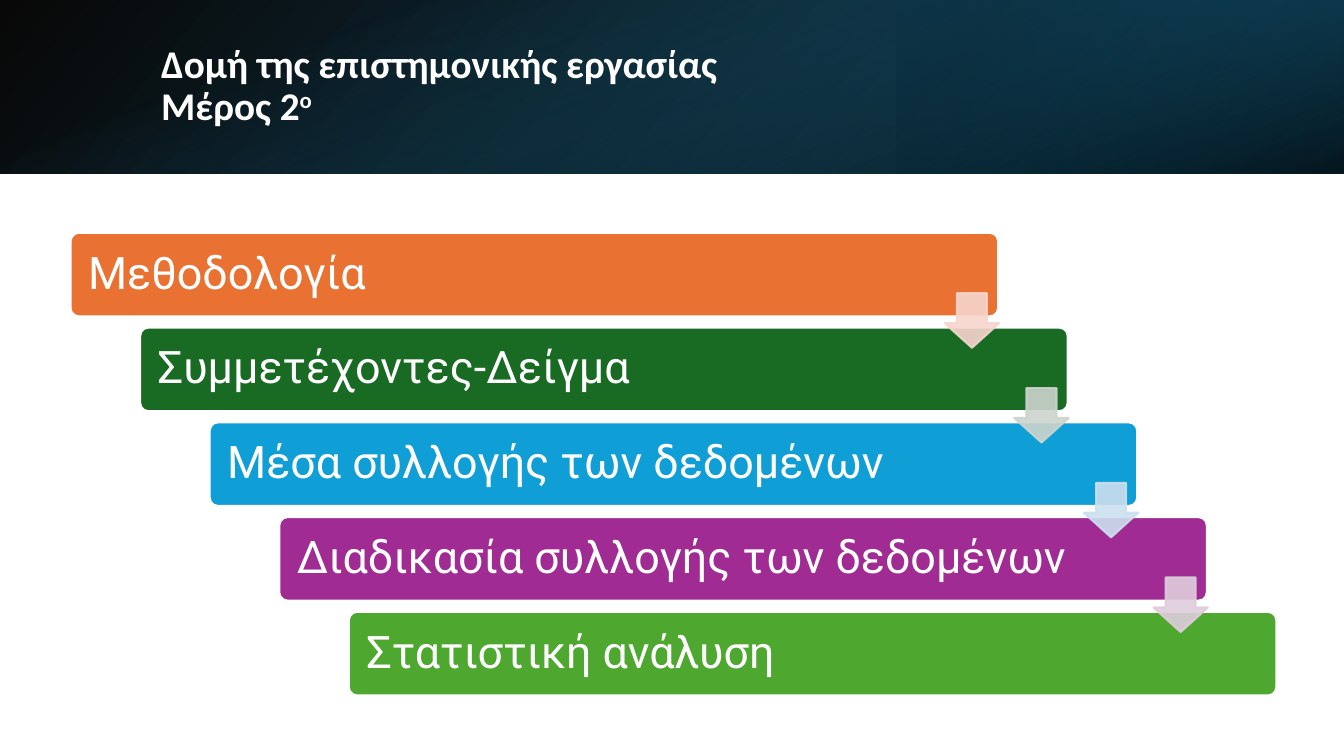
import dataclasses
import typing

import lxml.etree
import pptx
import pptx.dml.color
import pptx.enum.shapes
import pptx.enum.text
import pptx.oxml
import pptx.oxml.ns
import pptx.util

Inches = pptx.util.Inches
Pt = pptx.util.Pt
Shapes = pptx.enum.shapes.MSO_SHAPE
Anchor = pptx.enum.text.MSO_ANCHOR
qn = pptx.oxml.ns.qn


@dataclasses.dataclass(frozen=True)
class Theme:
    white: str = "FFFFFF"
    title_font: str = "Calibri"
    step_font: str = "Roboto"
    title_size: float = 28
    step_size: float = 32
    outline: float = 1.5
    arrow_opacity: int = 90
    line_spacing: float = 0.9


@dataclasses.dataclass(frozen=True)
class Stop:
    position: int
    color: str
    opacity: int


@dataclasses.dataclass(frozen=True)
class Layer:
    left: float
    top: float
    width: float
    height: float
    angle: int
    stops: tuple[Stop, ...]
    rotation: int = 0
    mirrored: bool = False


@dataclasses.dataclass(frozen=True)
class Step:
    text: str
    color: str
    arrow_color: typing.Optional[str] = None


THEME = Theme()
PAGE_WIDTH, PAGE_HEIGHT, HEADER_HEIGHT = 13.33, 7.5, 1.72
FIRST_LEFT, FIRST_TOP = 0.7, 2.31
STEP_RIGHT, STEP_DOWN = 0.69, 0.94
BAR_WIDTH, BAR_HEIGHT = 9.2, 0.83
ARROW_RIGHT, ARROW_DOWN, ARROW_SIZE = 8.67, 0.6, 0.54

HEADER = (
    Layer(0, 0, PAGE_WIDTH, HEADER_HEIGHT, 140,
          (Stop(0, "000000", 96), Stop(100, "104862", 96)), mirrored=True),
    Layer(8.89, 0, 4.44, HEADER_HEIGHT, 320,
          (Stop(19, "0B3041", 68), Stop(100, "156082", 79)), rotation=180, mirrored=True),
    Layer((PAGE_WIDTH - HEADER_HEIGHT) / 2, (HEADER_HEIGHT - PAGE_WIDTH) / 2,
          HEADER_HEIGHT, PAGE_WIDTH, 340,
          (Stop(23, "156082", 0), Stop(99, "000000", 74)), rotation=90),
)

STEPS = (
    Step("Μεθοδολογία", "E97132", "F7D5CE"),
    Step("Συμμετέχοντες-Δείγμα", "196B24", "CCD4CD"),
    Step("Μέσα συλλογής των δεδομένων", "0F9ED5", "CCDFEF"),
    Step("Διαδικασία συλλογής των δεδομένων", "A02B93", "DFCDDC"),
    Step("Στατιστική ανάλυση", "4EA72E"),
)


def rgb(color: str) -> pptx.dml.color.RGBColor:
    return pptx.dml.color.RGBColor.from_string(color)


def add_opacity(color_element: typing.Any, percent: int) -> None:
    alpha = lxml.etree.SubElement(color_element, qn("a:alpha"))
    alpha.set("val", str(percent * 1000))


def add_shape(page: typing.Any, kind: typing.Any, left: float, top: float,
              width: float, height: float) -> typing.Any:
    shape = page.shapes.add_shape(kind, Inches(left), Inches(top), Inches(width), Inches(height))
    shape.shadow.inherit = False
    return shape


def paint(shape: typing.Any, fill: str, line: str) -> None:
    shape.fill.solid()
    shape.fill.fore_color.rgb = rgb(fill)
    shape.line.color.rgb = rgb(line)
    shape.line.width = Pt(THEME.outline)


def add_span(para: typing.Any, text: str, font: str, size: float, bold: bool = False) -> typing.Any:
    span = para.add_run()
    span.text = text
    span.font.name = font
    span.font.size = Pt(size)
    span.font.bold = bold
    span.font.color.rgb = rgb(THEME.white)
    return span


def start_text(shape: typing.Any) -> typing.Any:
    frame = shape.text_frame
    frame.word_wrap = True
    frame.vertical_anchor = Anchor.MIDDLE
    para = frame.paragraphs[0]
    para.alignment = pptx.enum.text.PP_ALIGN.LEFT
    para.line_spacing = THEME.line_spacing
    return para


def draw_layer(page: typing.Any, layer: Layer) -> None:
    box = add_shape(page, Shapes.RECTANGLE, layer.left, layer.top, layer.width, layer.height)
    box.line.fill.background()
    box.rotation = layer.rotation
    if layer.mirrored:
        box.element.spPr.find(qn("a:xfrm")).set("flipH", "1")
    box.fill.gradient()
    gradient = box.element.spPr.find(qn("a:gradFill"))
    stop_list = gradient.find(qn("a:gsLst"))
    for preset_stop in list(stop_list):
        stop_list.remove(preset_stop)
    for stop in layer.stops:
        entry = lxml.etree.SubElement(stop_list, qn("a:gs"), pos=str(stop.position * 1000))
        color = lxml.etree.SubElement(entry, qn("a:srgbClr"), val=stop.color)
        add_opacity(color, stop.opacity)
    direction = gradient.find(qn("a:lin"))
    direction.set("ang", str(layer.angle * 60000))
    direction.set("scaled", "0")


def draw_title(page: typing.Any) -> None:
    box = page.shapes.add_textbox(Inches(1.5), Inches(0.38), Inches(10.98), Inches(0.96))
    para = start_text(box)
    style = (THEME.title_font, THEME.title_size, True)
    add_span(para, "Δομή της επιστημονικής εργασίας", *style)
    para.add_line_break()
    add_span(para, "Μέρος 2", *style)
    ordinal = add_span(para, "ο", *style)
    ordinal.font._element.set("baseline", "30000")


def draw_bar(page: typing.Any, step: Step, left: float, top: float) -> None:
    bar = add_shape(page, Shapes.ROUNDED_RECTANGLE, left, top, BAR_WIDTH, BAR_HEIGHT)
    bar.adjustments[0] = 0.1
    paint(bar, step.color, THEME.white)
    para = start_text(bar)
    bar.text_frame.margin_left = Inches(0.15)
    add_span(para, step.text, THEME.step_font, THEME.step_size)


def draw_arrow(page: typing.Any, color: str, left: float, top: float) -> None:
    arrow = add_shape(page, Shapes.DOWN_ARROW, left, top, ARROW_SIZE, ARROW_SIZE)
    arrow.adjustments[0] = 0.55
    arrow.adjustments[1] = 0.45
    paint(arrow, color, color)
    for color_element in arrow.element.spPr.iter(qn("a:srgbClr")):
        add_opacity(color_element, THEME.arrow_opacity)


def main() -> None:
    deck = pptx.Presentation()
    deck.slide_width = Inches(PAGE_WIDTH)
    deck.slide_height = Inches(PAGE_HEIGHT)
    page = deck.slides.add_slide(deck.slide_layouts[6])
    for layer in HEADER:
        draw_layer(page, layer)
    draw_title(page)
    places = [(FIRST_LEFT + STEP_RIGHT * index, FIRST_TOP + STEP_DOWN * index)
              for index in range(len(STEPS))]
    for step, (left, top) in zip(STEPS, places):
        draw_bar(page, step, left, top)
    for step, (left, top) in zip(STEPS, places):
        if step.arrow_color:
            draw_arrow(page, step.arrow_color, left + ARROW_RIGHT, top + ARROW_DOWN)
    deck.save("out.pptx")


if __name__ == "__main__":
    main()
